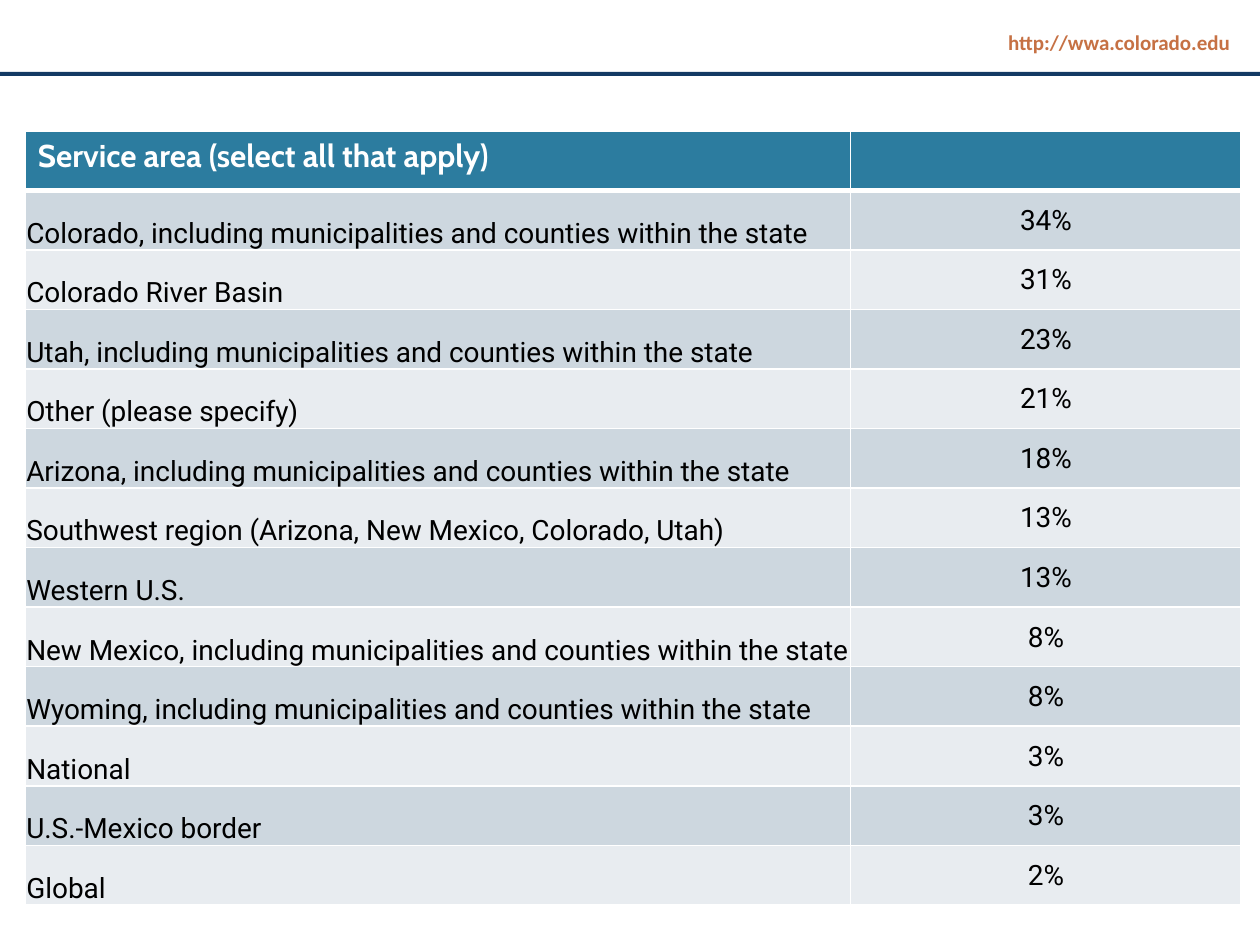
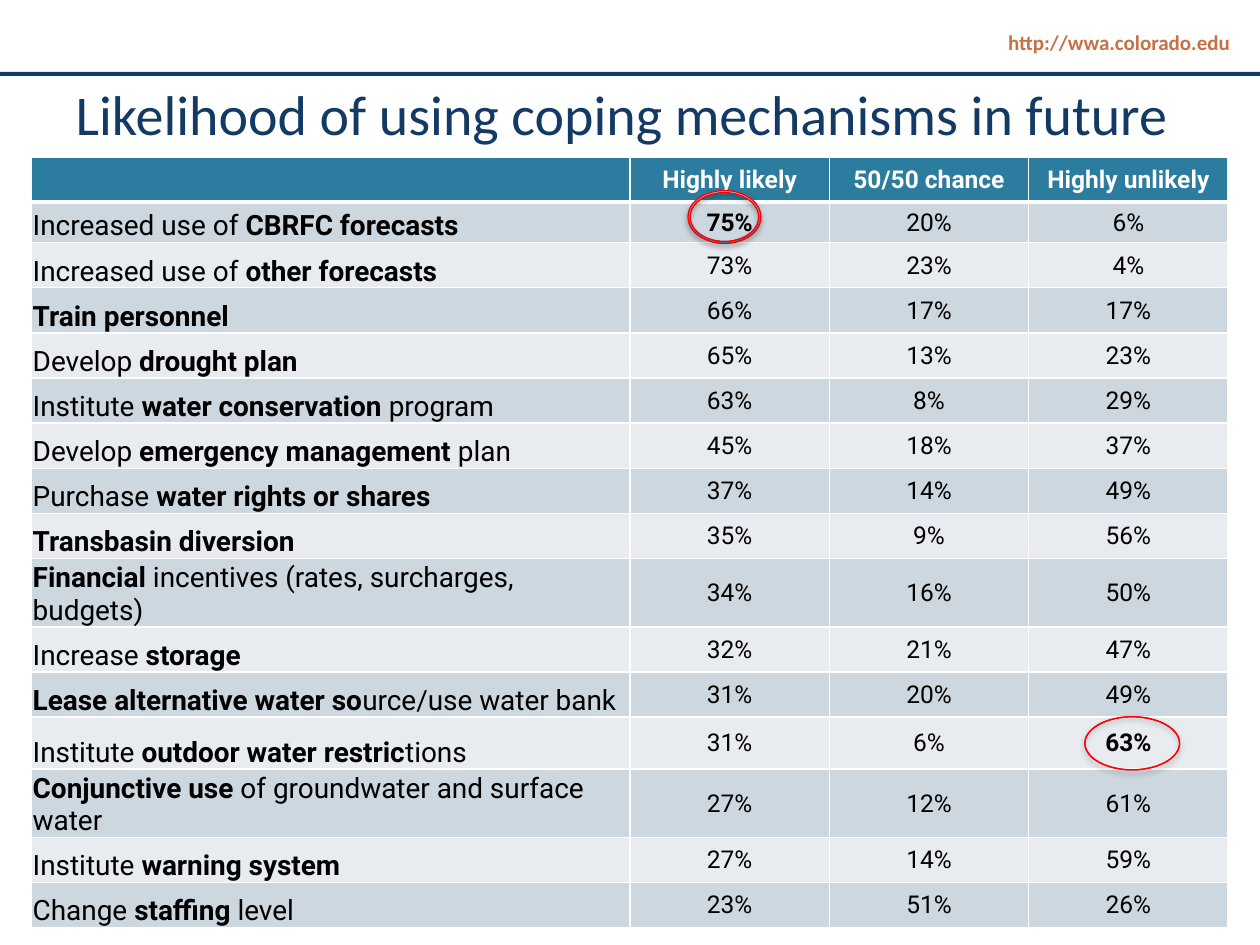
import lxml.etree
import pptx
import pptx.dml.color
import pptx.enum.shapes
import pptx.enum.text
import pptx.oxml.ns
import pptx.util

Cm = pptx.util.Cm
Pt = pptx.util.Pt
RGB = pptx.dml.color.RGBColor
ALIGN = pptx.enum.text.PP_ALIGN
ANCHOR = pptx.enum.text.MSO_ANCHOR
SHAPE = pptx.enum.shapes.MSO_SHAPE
qn = pptx.oxml.ns.qn

NAVY = RGB(0x13, 0x3A, 0x64)
RUST = RGB(0xC6, 0x71, 0x44)
TEAL = RGB(0x2C, 0x7C, 0x9F)
DARK = RGB(0xCD, 0xD7, 0xDF)
PALE = RGB(0xE8, 0xEC, 0xF0)
BLUE = RGB(0x1B, 0x83, 0xB0)
SKY = RGB(0xA0, 0xCF, 0xF4)
RED = RGB(0xFF, 0, 0)
WHITE = RGB(0xFF, 0xFF, 0xFF)
BLACK = RGB(0, 0, 0)

LINK = dict(name="Calibri", size=Pt(12), bold=True)
TITLE = dict(name="Calibri", size=Pt(32), bold=False)
HEAD = dict(name="Cabin", size=Pt(18), bold=True)
LABEL = dict(name="Roboto", size=Pt(16), bold=False)
VALUE = dict(name="Roboto", size=Pt(14), bold=False)
TIGHT = dict(margin_left=Cm(0.02), margin_right=Cm(0.02),
             margin_top=Cm(0.02), margin_bottom=0)

AREAS = [
    ("Colorado, including municipalities and counties within the state", "34%"),
    ("Colorado River Basin", "31%"),
    ("Utah, including municipalities and counties within the state", "23%"),
    ("Other (please specify)", "21%"),
    ("Arizona, including municipalities and counties within the state", "18%"),
    ("Southwest region (Arizona, New Mexico, Colorado, Utah)", "13%"),
    ("Western U.S.", "13%"),
    ("New Mexico, including municipalities and counties within the state", "8%"),
    ("Wyoming, including municipalities and counties within the state", "8%"),
    ("National", "3%"),
    ("U.S.-Mexico border", "3%"),
    ("Global", "2%"),
]

# Asterisks enclose bold words.
COPING = [
    ("", "*Highly likely*", "*50/50 chance*", "*Highly unlikely*"),
    ("Increased use of *CBRFC forecasts*", "*75%*", "20%", "6%"),
    ("Increased use of *other forecasts*", "73%", "23%", "4%"),
    ("*Train personnel*", "66%", "17%", "17%"),
    ("Develop *drought plan*", "65%", "13%", "23%"),
    ("Institute *water conservation *program", "63%", "8%", "29%"),
    ("Develop *emergency management *plan", "45%", "18%", "37%"),
    ("Purchase *water rights or shares*", "37%", "14%", "49%"),
    ("*Transbasin diversion*", "35%", "9%", "56%"),
    ("*Financial* incentives (rates, surcharges, budgets)", "34%", "16%", "50%"),
    ("Increase *storage*", "32%", "21%", "47%"),
    ("*Lease alternative water so*urce/use water bank", "31%", "20%", "49%"),
    ("Institute *outdoor water restric*tions", "31%", "6%", "*63%*"),
    ("*Conjunctive use *of groundwater and surface water", "27%", "12%", "61%"),
    ("Institute *warning system*", "27%", "14%", "59%"),
    ("Change *staffing *level", "23%", "51%", "26%"),
]


def apply(target, values):
    for key, value in values.items():
        setattr(target, key, value)


class Deck:
    def __init__(self):
        self.prs = pptx.Presentation()
        self.prs.slide_width, self.prs.slide_height = Cm(25.4), Cm(19.05)
        self.slide = None

    def start(self, layout):
        """Add a slide with the shared web address and rule."""
        self.slide = self.prs.slides.add_slide(self.prs.slide_layouts[layout])
        box = self.slide.shapes.add_textbox(Cm(17.91), Cm(0.48), Cm(7.14), Cm(0.76))
        box.text_frame.word_wrap = True
        para = box.text_frame.paragraphs[0]
        para.alignment = ALIGN.RIGHT
        self.words(para, "http://wwa.colorado.edu", LINK, RUST)
        rule = self.slide.shapes.add_shape(SHAPE.RECTANGLE, 0, Cm(1.45), Cm(25.4), Cm(0.08))
        rule.shadow.inherit = False
        rule.fill.solid()
        rule.fill.fore_color.rgb = NAVY
        rule.line.fill.background()

    def words(self, para, text, style, color):
        """Add runs, with words between asterisks in bold."""
        for i, part in enumerate(text.split("*")):
            if part:
                run = para.add_run()
                run.text = part
                apply(run.font, style)
                run.font.color.rgb = color
                if i % 2:
                    run.font.bold = True

    def title(self, text):
        head = self.slide.shapes.title
        apply(head, dict(left=Cm(1.27), top=Cm(1.47), width=Cm(22.86), height=Cm(1.65)))
        apply(head.text_frame, dict(vertical_anchor=ANCHOR.TOP, word_wrap=True))
        para = head.text_frame.paragraphs[0]
        para.alignment = ALIGN.LEFT
        self.words(para, text, TITLE, NAVY)

    def edge(self, cell, row):
        """Draw white cell borders, thick below the header."""
        heavy = {(0, "B"), (1, "T")}
        for side in "LRTB":
            width = 3 if (row, side) in heavy else 1
            line = lxml.etree.SubElement(cell._tc.get_or_add_tcPr(), qn("a:ln" + side),
                                         w=str(Pt(width)))
            fill = lxml.etree.SubElement(line, qn("a:solidFill"))
            lxml.etree.SubElement(fill, qn("a:srgbClr"), val=str(WHITE))

    def table(self, left, top, cols, rows, data, value):
        frame = self.slide.shapes.add_table(len(rows), len(cols), Cm(left), Cm(top),
                                            Cm(sum(cols)), Cm(sum(rows)))
        grid = frame.table
        for col, width in zip(grid.columns, cols):
            col.width = Cm(width)
        for r, (height, texts) in enumerate(zip(rows, data)):
            grid.rows[r].height = Cm(height)
            for c, text in enumerate(texts):
                cell = grid.cell(r, c)
                self.edge(cell, r)
                cell.fill.solid()
                cell.fill.fore_color.rgb = TEAL if r == 0 else DARK if r % 2 else PALE
                para = cell.text_frame.paragraphs[0]
                if r == 0 and c == 0 and text:
                    cell.vertical_anchor = ANCHOR.TOP
                    self.words(para, text, HEAD, WHITE)
                    continue
                apply(cell, TIGHT)
                cell.vertical_anchor = ANCHOR.MIDDLE if c else ANCHOR.BOTTOM
                para.alignment = ALIGN.CENTER if c else ALIGN.LEFT
                self.words(para, text, value if c else LABEL, BLACK if r else WHITE)

    def ring(self, left, top, width, height, band):
        """Circle a value with a thin red ring and a soft shadow."""
        ring = self.slide.shapes.add_shape(SHAPE.DONUT, Cm(left), Cm(top),
                                           Cm(width), Cm(height))
        ring.adjustments[0] = band
        ring.fill.gradient()
        ring.fill.gradient_angle = 90
        for stop, color in zip(ring.fill.gradient_stops, (BLUE, SKY)):
            stop.color.rgb = color
        ring.line.color.rgb = RED
        ring.line.width = Pt(0.75)
        ring.shadow.inherit = False
        effects = ring._element.spPr.find(qn("a:effectLst"))
        shade = lxml.etree.SubElement(effects, qn("a:outerShdw"), blurRad=str(Pt(3.1)),
                                      dist=str(Pt(1.8)), dir="5400000", rotWithShape="0")
        tint = lxml.etree.SubElement(shade, qn("a:srgbClr"), val=str(BLACK))
        lxml.etree.SubElement(tint, qn("a:alpha"), val="35000")


def main():
    deck = Deck()

    deck.start(6)
    areas = [("Service area (select all that apply)", "")] + AREAS
    deck.table(0.51, 2.64, [16.64, 7.87], [1.2] * len(areas), areas, LABEL)

    deck.start(5)
    deck.title("Likelihood of using coping mechanisms in future")
    rows = [0.91] * len(COPING)
    rows[:2] = 0.89, 0.82
    rows[9] = rows[13] = 1.34
    rows[12] = 1.05
    deck.table(0.64, 3.18, [12.06] + [4.02] * 3, rows, COPING, VALUE)
    deck.ring(13.87, 3.84, 1.47, 1.07, 0.04)
    deck.ring(21.87, 14.45, 1.91, 1.07, 0)

    deck.prs.save("out.pptx")


if __name__ == "__main__":
    main()
